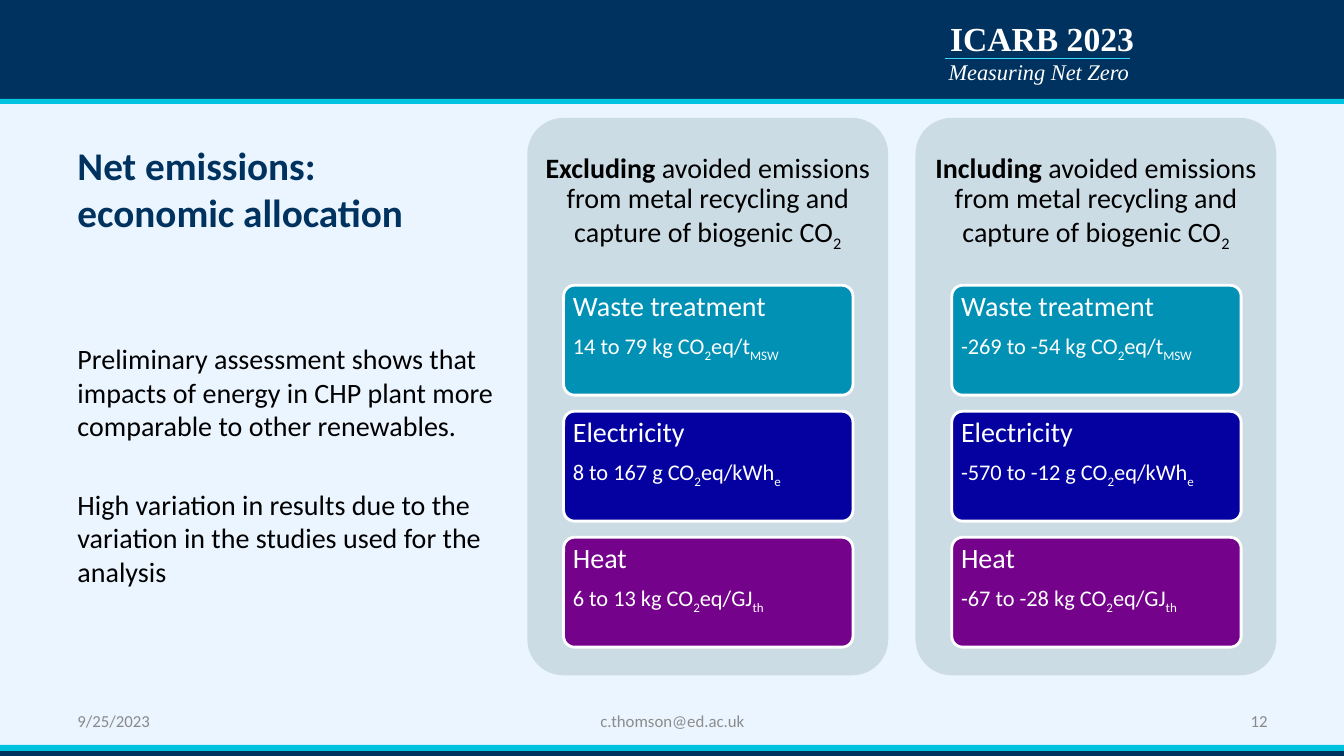
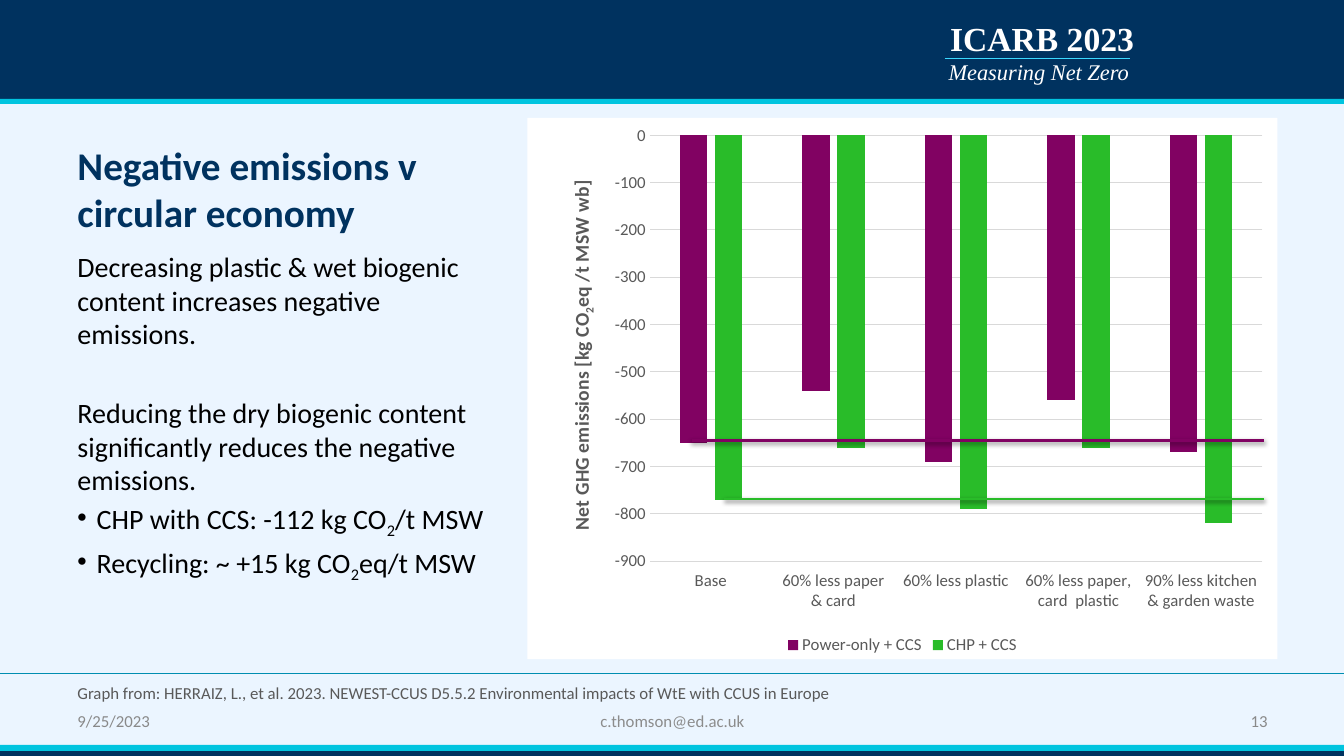
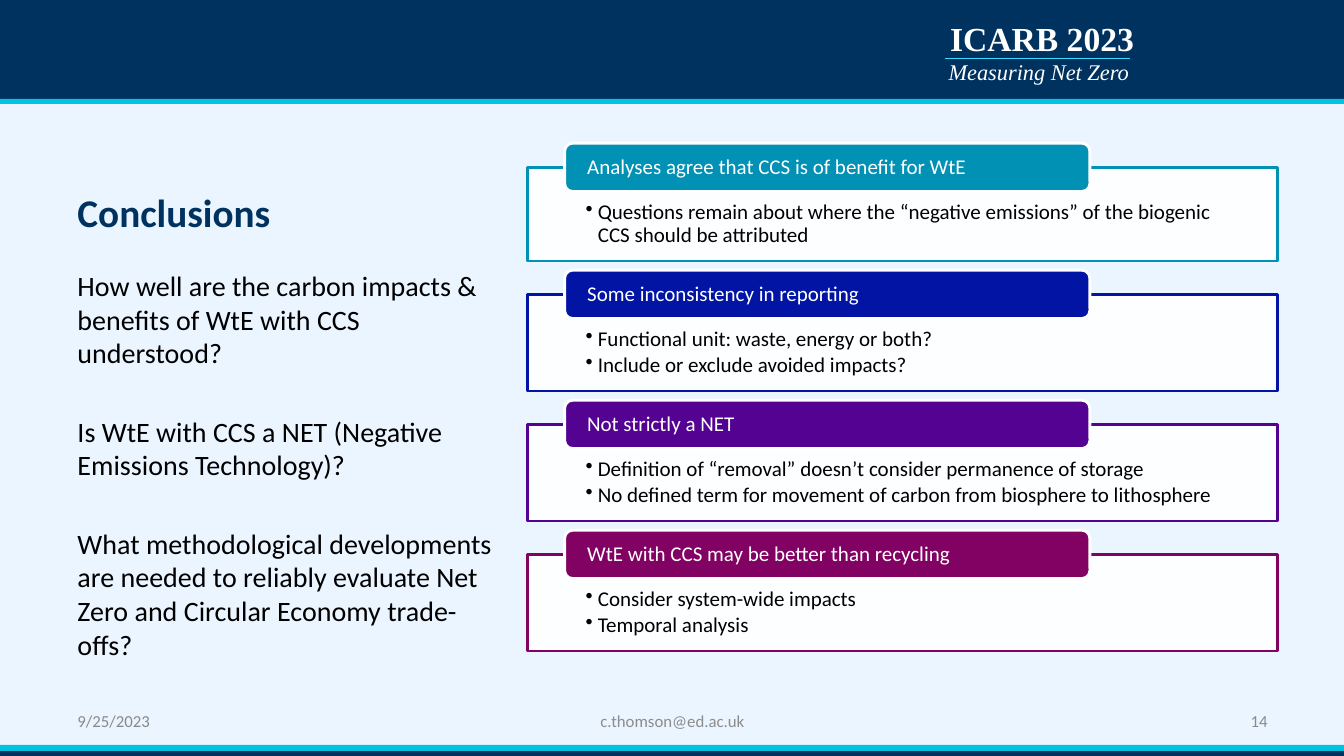
from dataclasses import dataclass

from lxml.etree import SubElement
from pptx import Presentation
from pptx.chart.data import CategoryChartData
from pptx.dml.color import RGBColor
from pptx.enum.chart import XL_CHART_TYPE as ChartType, XL_LEGEND_POSITION as LegendPosition
from pptx.enum.chart import XL_TICK_LABEL_POSITION as LabelPosition, XL_TICK_MARK as TickMark
from pptx.enum.shapes import MSO_CONNECTOR as Connector, MSO_SHAPE as Shape
from pptx.enum.text import MSO_ANCHOR as Anchor, PP_ALIGN as Align
from pptx.oxml import parse_xml
from pptx.oxml.ns import nsdecls, qn
from pptx.util import Inches, Pt


@dataclass(frozen=True)
class Theme:
    """Colours, fonts and type sizes shared by the slides."""

    background: str = "EBF5FF"
    navy: str = "00325F"
    cyan: str = "00C4DF"
    logo_rule: str = "3AD8FF"
    source_rule: str = "008EB1"
    panel: str = "CCDCE5"
    white: str = "FFFFFF"
    black: str = "000000"
    grey: str = "595959"
    footer: str = "898989"
    footer_email: str = "8C8C8C"
    grid: str = "D9D9D9"
    teal: str = "0091B5"
    blue: str = "0401A0"
    purple: str = "75028B"
    royal: str = "0114A3"
    violet: str = "530292"
    plum: str = "810262"
    green: str = "29BC29"
    font: str = "Calibri"
    serif: str = "Times New Roman"
    title_size: int = 28
    event_size: int = 24
    body_size: int = 20
    detail_size: int = 16
    list_size: int = 15
    axis_size: int = 14
    small_size: int = 12


THEME = Theme()
WIDTH, HEIGHT = 13.33, 7.5
LEFT, TOP = 0.67, 1.17
RIGHT_COLUMN, RIGHT_WIDTH = 5.23, 7.44
BODY_GAP = 32


def rgb(color):
    """Turn a hex string into a colour."""
    return RGBColor.from_string(color)


def add_text(frame, text, size=THEME.body_size, color=THEME.black, font=THEME.font, bold=False,
             italic=False, lead="", align=None, before=0, after=0, spacing=None, indent=0, bullet=False):
    """Add a paragraph; braces mark subscripts, and lead is a bold opening."""
    first = frame.paragraphs[0]
    paragraph = frame.add_paragraph() if first.runs else first
    paragraph.alignment = align
    paragraph.space_before, paragraph.space_after = Pt(before), Pt(after)
    paragraph.line_spacing = spacing
    properties = paragraph._p.get_or_add_pPr()
    if indent:
        properties.set("marL", str(Inches(indent)))
    if bullet:
        properties.set("indent", str(-Inches(indent)))
        SubElement(properties, qn("a:buChar"), char="•")

    def add_run(words, is_bold, subscript=False):
        run = paragraph.add_run()
        run.text = words
        run.font.name, run.font.size = font, Pt(size)
        run.font.bold, run.font.italic = is_bold, italic
        run.font.color.rgb = rgb(color)
        if subscript:
            run.font._element.set("baseline", "-25000")

    if lead:
        add_run(lead, True)
    for line_index, line in enumerate(text.split("\n")):
        if line_index:
            paragraph.add_line_break()
        for part_index, part in enumerate(line.replace("}", "{").split("{")):
            if part:
                add_run(part, bold, part_index % 2 == 1)


def set_frame(shape, insets=(0.1, 0.05, 0.1, 0.05), anchor=Anchor.TOP):
    """Set wrapping, insets and anchor, and return the text frame."""
    frame = shape.text_frame
    frame.word_wrap = True
    frame.vertical_anchor = anchor
    frame.margin_left, frame.margin_top, frame.margin_right, frame.margin_bottom = map(Inches, insets)
    return frame


def add_text_box(slide, box, **frame_format):
    """Add a text box and return its frame."""
    return set_frame(slide.shapes.add_textbox(*map(Inches, box)), **frame_format)


def add_box(slide, box, fill, kind=Shape.RECTANGLE, line=None, rounding=None, opacity=None):
    """Add a filled shape with an optional 2 pt outline."""
    shape = slide.shapes.add_shape(kind, *map(Inches, box))
    shape.shadow.inherit = False
    shape.fill.solid()
    shape.fill.fore_color.rgb = rgb(fill)
    if opacity:
        color = shape._element.spPr.find(".//" + qn("a:srgbClr"))
        SubElement(color, qn("a:alpha"), val=str(opacity * 1000))
    if line:
        shape.line.color.rgb = rgb(line)
        shape.line.width = Pt(2)
    else:
        shape.line.fill.background()
    if rounding:
        shape.adjustments[0] = rounding
    return shape


def add_rule(slide, left, right, top, color, width, shadow=False):
    """Add a horizontal line with an optional soft shadow."""
    rule = slide.shapes.add_connector(Connector.STRAIGHT, *map(Inches, (left, top, right, top)))
    rule.line.color.rgb = rgb(color)
    rule.line.width = Pt(width)
    effects = SubElement(rule._element.spPr, qn("a:effectLst"))
    if shadow:
        outer = SubElement(effects, qn("a:outerShdw"), blurRad=str(Pt(3.1)), dist=str(Pt(1.6)),
                           dir="5400000", rotWithShape="0")
        color_element = SubElement(outer, qn("a:srgbClr"), val=THEME.black)
        SubElement(color_element, qn("a:alpha"), val="38000")


def add_event_name(slide):
    """Add the event name in the top band."""
    frame = add_text_box(slide, (9.25, 0.13, 2.17, 0.82))
    style = dict(font=THEME.serif, color=THEME.white)
    add_text(frame, "ICARB 2023", size=THEME.event_size, bold=True, align=Align.CENTER, **style)
    add_text(frame, "Measuring Net Zero", size=THEME.detail_size, italic=True, indent=0.06, **style)
    add_rule(slide, 9.37, 11.21, 0.58, THEME.logo_rule, 0.5)


def start_slide(presentation, title, number):
    """Add a blank slide with bands, event name, title and footers."""
    slide = presentation.slides.add_slide(presentation.slide_layouts[6])
    slide.background.fill.solid()
    slide.background.fill.fore_color.rgb = rgb(THEME.background)
    for top, height, color in ((0, 0.99, THEME.navy), (7.45, 0.05, THEME.navy),
                               (7.39, 0.06, THEME.cyan), (0.98, 0.05, THEME.cyan)):
        add_box(slide, (0, top, WIDTH, height), color)
    add_event_name(slide)
    frame = add_text_box(slide, (LEFT, TOP, 4.39, 1.21), anchor=Anchor.BOTTOM)
    add_text(frame, title, size=THEME.title_size, color=THEME.navy, bold=True)
    for left, width, text, align, color in (
            (LEFT, 3.11, "9/25/2023", Align.LEFT, THEME.footer),
            (4.56, 4.22, "c.thomson@ed.ac.uk", Align.CENTER, THEME.footer_email),
            (9.56, 3.11, str(number), Align.RIGHT, THEME.footer)):
        frame = add_text_box(slide, (left, 6.95, width, 0.4), anchor=Anchor.MIDDLE)
        add_text(frame, text, size=THEME.small_size, color=color, align=align)
    return slide


def add_body(slide, paragraphs, bullets=(), height=4.18, bottom=0.05):
    """Add the left column: spaced paragraphs, then bullets."""
    frame = add_text_box(slide, (LEFT, 2.52, 4.39, height), insets=(0.1, 0.05, 0.1, bottom),
                         anchor=Anchor.MIDDLE)
    for index, text in enumerate(paragraphs):
        add_text(frame, text, before=BODY_GAP if index else 0)
    for text in bullets:
        add_text(frame, text, before=4, indent=0.19, bullet=True)


def add_result_panel(slide, left, lead, results):
    """Add a panel with a heading and a column of result cards."""
    add_box(slide, (left, TOP, 3.58, 5.53), THEME.panel, Shape.ROUNDED_RECTANGLE, rounding=0.1)
    frame = add_text_box(slide, (left, TOP, 3.58, 1.66), insets=(0.08,) * 4, anchor=Anchor.MIDDLE)
    add_text(frame, " avoided emissions from metal recycling and capture of biogenic CO{2}",
             lead=lead, align=Align.CENTER, spacing=0.9, after=7)
    cards = zip(("Waste treatment", "Electricity", "Heat"), results,
                (THEME.teal, THEME.blue, THEME.purple))
    for index, (name, result, color) in enumerate(cards):
        card = add_box(slide, (left + 0.36, 2.83 + 1.25 * index, 2.87, 1.09), color,
                       Shape.ROUNDED_RECTANGLE, line=THEME.white, rounding=0.1)
        frame = set_frame(card, insets=(0.06, 0.04, 0.06, 0.04))
        style = dict(color=THEME.white, spacing=0.9, align=Align.LEFT)
        add_text(frame, name, after=7, **style)
        add_text(frame, result, size=THEME.detail_size, **style)


def add_conclusion(slide, top, height, color, heading, points):
    """Add an outlined box of points with a heading tab."""
    box = add_box(slide, (RIGHT_COLUMN, top, RIGHT_WIDTH, height), THEME.white, line=color, opacity=90)
    frame = set_frame(box, insets=(0.58, 0.34, 0.58, 0.12))
    style = dict(size=THEME.list_size, spacing=0.9, align=Align.LEFT)
    for point in points:
        add_text(frame, point, after=2.25, indent=0.12, bullet=True, **style)
    tab = add_box(slide, (5.6, top - 0.24, 5.21, 0.48), color, Shape.ROUNDED_RECTANGLE, line=THEME.white)
    add_text(set_frame(tab, insets=(0.2, 0, 0.2, 0), anchor=Anchor.MIDDLE), heading,
             color=THEME.white, **style)


def set_layout(element, position, **values):
    """Give a chart element a manual layout."""
    layout = element.find(qn("c:layout"))
    if layout is None:
        layout = parse_xml(f"<c:layout {nsdecls('c')}/>")
        element.insert(position, layout)
    manual = SubElement(layout, qn("c:manualLayout"))
    for name, value in values.items():
        SubElement(manual, qn("c:" + name), val=str(value))


def add_emissions_chart(slide):
    """Add the clustered column chart of net emissions."""
    data = CategoryChartData(number_format="0")
    data.categories = ["Base", "60% less paper & card", "60% less plastic",
                       "60% less paper, card  plastic", "90% less kitchen & garden waste"]
    data.add_series("Power-only + CCS", (-650, -540, -690, -560, -670))
    data.add_series("CHP + CCS", (-770, -660, -790, -660, -820))
    box = map(Inches, (RIGHT_COLUMN, TOP, RIGHT_WIDTH, 5.37))
    chart = slide.shapes.add_chart(ChartType.COLUMN_CLUSTERED, *box, data).chart
    chart.font.name, chart.font.size = THEME.font, Pt(THEME.small_size)
    chart.font.color.rgb = rgb(THEME.grey)
    chart.has_title = False
    chart.has_legend = True
    chart.legend.position = LegendPosition.BOTTOM
    chart.legend.include_in_layout = False

    plot = chart.plots[0]
    plot.gap_width, plot.overlap, plot.vary_by_categories = 219, -27, False
    for series, color in zip(plot.series, (THEME.plum, THEME.green)):
        series.invert_if_negative = False
        series.format.fill.solid()
        series.format.fill.fore_color.rgb = rgb(color)

    category_axis, value_axis = chart.category_axis, chart.value_axis
    for axis in (category_axis, value_axis):
        axis.major_tick_mark = axis.minor_tick_mark = TickMark.NONE
    category_axis.tick_label_position = LabelPosition.LOW
    value_axis.minimum_scale, value_axis.maximum_scale, value_axis.major_unit = -900, 0, 100
    value_axis.tick_labels.number_format = "0"
    value_axis.tick_labels.number_format_is_linked = False
    value_axis.format.line.fill.background()
    for line in (category_axis.format.line, value_axis.major_gridlines.format.line):
        line.color.rgb = rgb(THEME.grid)
        line.width = Pt(0.75)

    title = value_axis.axis_title
    add_text(title.text_frame, "Net GHG emissions [kg CO{2}eq /t MSW wb]",
             size=THEME.axis_size, color=THEME.grey, bold=True)
    title.text_frame._txBody.bodyPr.set("rot", "-5400000")
    set_layout(title._element, 1, xMode="edge", yMode="edge", x=0.05, y=0.11)
    chart_element = chart._chartSpace.find(qn("c:chart"))
    set_layout(chart_element.find(qn("c:plotArea")), 0, layoutTarget="inner", xMode="edge",
               yMode="edge", x=0.163, y=0.032, w=0.817, h=0.787)
    chart_element.addnext(parse_xml(
        f"<c:spPr {nsdecls('c', 'a')}><a:solidFill><a:srgbClr val='{THEME.white}'/></a:solidFill>"
        "<a:ln><a:noFill/></a:ln></c:spPr>"))


def build_net_emissions(presentation):
    """Build the economic allocation slide."""
    slide = start_slide(presentation, "Net emissions: \neconomic allocation", 12)
    add_result_panel(slide, RIGHT_COLUMN, "Excluding", (
        "14 to 79 kg CO{2}eq/t{MSW}", "8 to 167 g CO{2}eq/kWh{e}", "6 to 13 kg CO{2}eq/GJ{th}"))
    add_result_panel(slide, RIGHT_COLUMN + 3.85, "Including", (
        "-269 to -54 kg CO{2}eq/t{MSW}", "-570 to -12 g CO{2}eq/kWh{e}", "-67 to -28 kg CO{2}eq/GJ{th}"))
    add_body(slide, (
        "Preliminary assessment shows that impacts of energy in CHP plant more comparable to other renewables.",
        "High variation in results due to the variation in the studies used for the analysis"))


def build_circular_economy(presentation):
    """Build the slide with the emissions chart."""
    slide = start_slide(presentation, "Negative emissions v circular economy", 13)
    add_emissions_chart(slide)
    add_body(slide, (
        "Decreasing plastic & wet biogenic content increases negative emissions.",
        "Reducing the dry biogenic content significantly reduces the negative emissions."),
        bullets=("CHP with CCS: -112 kg CO{2}/t MSW", "Recycling: ~ +15 kg CO{2}eq/t MSW"),
        height=4.02, bottom=0.84)
    frame = add_text_box(slide, (LEFT, 6.72, 12, 0.3))
    add_text(frame, "Graph from: HERRAIZ, L., et al. 2023. NEWEST-CCUS D5.5.2 Environmental impacts "
             "of WtE with CCUS in Europe", size=THEME.small_size, color=THEME.grey)
    add_rule(slide, 0, WIDTH, 6.68, THEME.source_rule, 0.75)
    add_rule(slide, 7.18, 12.54, 4.95, THEME.green, 2, shadow=True)
    add_rule(slide, 6.86, 12.54, 4.37, THEME.plum, 2, shadow=True)


def build_conclusions(presentation):
    """Build the conclusions slide."""
    slide = start_slide(presentation, "Conclusions", 14)
    add_body(slide, (
        "How well are the carbon impacts & benefits of WtE with CCS understood?",
        "Is WtE with CCS a NET (Negative Emissions Technology)?",
        "What methodological developments are needed to reliably evaluate Net Zero and Circular "
        "Economy trade-offs?"))
    conclusions = (
        (0.93, THEME.teal, "Analyses agree that CCS is of benefit for WtE",
         ("Questions remain about where the “negative emissions” of the biogenic CCS should be attributed",)),
        (0.96, THEME.royal, "Some inconsistency in reporting",
         ("Functional unit: waste, energy or both?", "Include or exclude avoided impacts?")),
        (0.96, THEME.violet, "Not strictly a NET",
         ("Definition of “removal” doesn’t consider permanence of storage",
          "No defined term for movement of carbon from biosphere to lithosphere")),
        (0.96, THEME.plum, "WtE with CCS may be better than recycling",
         ("Consider system-wide impacts", "Temporal analysis")))
    top = 1.66
    for height, color, heading, points in conclusions:
        add_conclusion(slide, top, height, color, heading, points)
        top += height + 0.33


def main():
    """Build and save the presentation."""
    presentation = Presentation()
    presentation.slide_width, presentation.slide_height = Inches(WIDTH), Inches(HEIGHT)
    build_net_emissions(presentation)
    build_circular_economy(presentation)
    build_conclusions(presentation)
    presentation.save("out.pptx")


if __name__ == "__main__":
    main()
